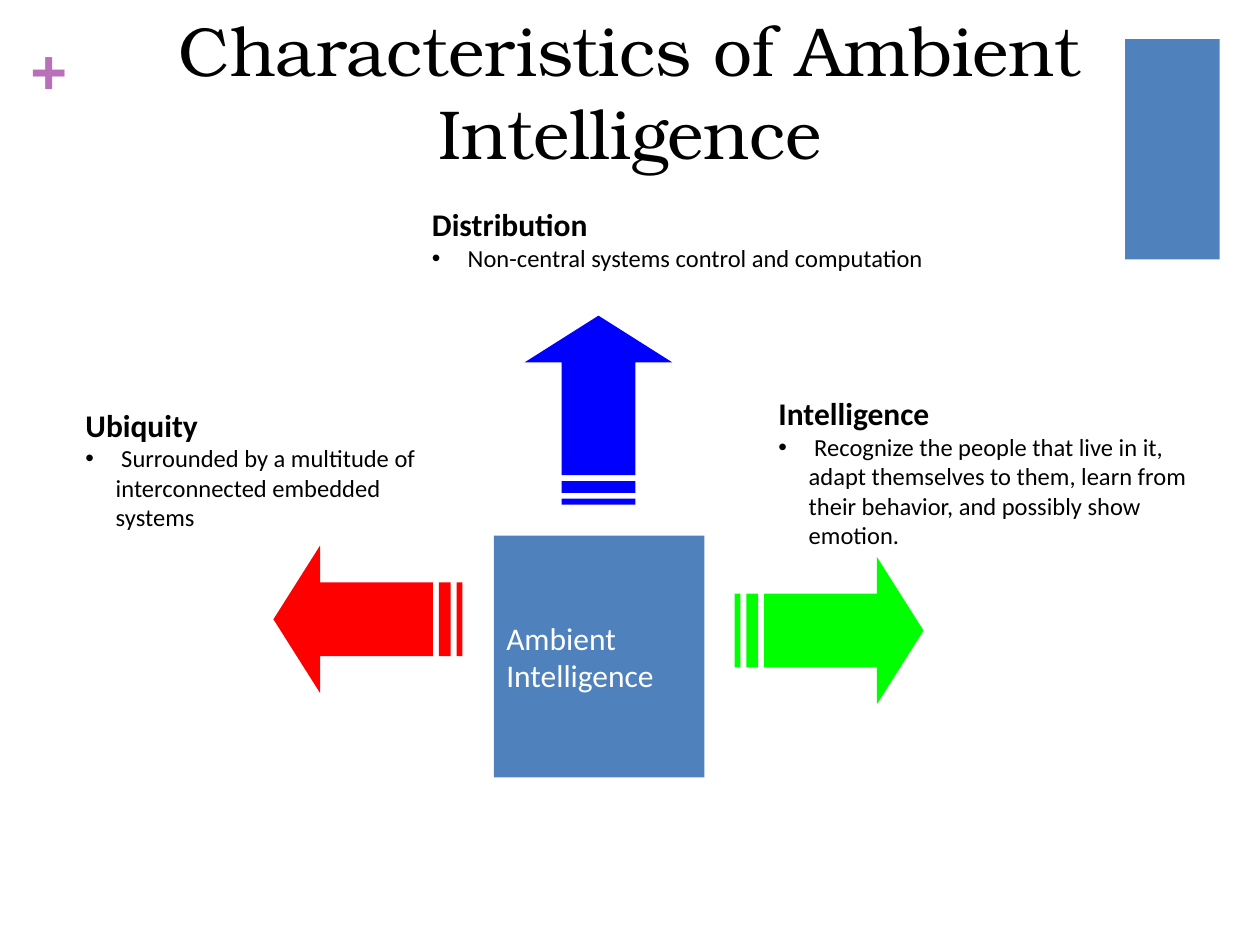
from dataclasses import dataclass

from lxml import etree
from pptx import Presentation
from pptx.dml.color import RGBColor
from pptx.enum.shapes import MSO_SHAPE
from pptx.enum.text import MSO_ANCHOR, MSO_AUTO_SIZE, PP_ALIGN
from pptx.oxml.ns import qn
from pptx.util import Inches, Pt

RECT = MSO_SHAPE.RECTANGLE
MIDDLE = MSO_ANCHOR.MIDDLE
CENTER, LEFT = PP_ALIGN.CENTER, PP_ALIGN.LEFT
NO_FIT = MSO_AUTO_SIZE.NONE

COLORS = {
    "panel": "4F81BD", "plus": "B870B8", "black": "000000", "white": "FFFFFF",
    "green": "00FF00", "red": "FF0000", "blue": "0000FF",
}
ARROW_W, ARROW_H = 1.5, 1.17
HEAD = 0.37  # length of the arrow head
INDENT = 0.24


@dataclass
class Arrow:
    left: float
    top: float
    turn: int
    color: str


@dataclass
class Trait:
    left: float
    top: float
    width: float
    height: float
    head: str
    point: str


ARROWS = [
    Arrow(5.83, 4.42, 0, "green"),
    Arrow(2.17, 4.33, 180, "red"),
    Arrow(4, 2.67, 270, "blue"),
]
TRAITS = [
    Trait(6.08, 3.08, 3.58, 1.35, "Intelligence",
          " Recognize the people that live in it, adapt themselves to them, "
          "learn from their behavior, and possibly show emotion."),
    Trait(0.58, 3.17, 3.08, 1.11, "Ubiquity",
          " Surrounded by a multitude of interconnected embedded systems"),
    Trait(3.33, 1.58, 5, 0.64, "Distribution",
          " Non-central systems control and computation"),
]


def style(para, size: float, font: str, color: str, bold: bool = False) -> None:
    for run in para.runs:
        run.font.size = Pt(size)
        run.font.name = font
        run.font.bold = bold
        run.font.color.rgb = RGBColor.from_string(COLORS[color])


def paint(shape, color: str) -> None:
    shape.shadow.inherit = False
    shape.fill.solid()
    shape.fill.fore_color.rgb = RGBColor.from_string(COLORS[color])
    shape.line.fill.background()


def add_panel(shapes, left: float, top: float, width: float, height: float):
    panel = shapes.add_shape(RECT, Inches(left), Inches(top),
                             Inches(width), Inches(height))
    paint(panel, "panel")
    return panel


def add_arrow(shapes, arrow: Arrow) -> None:
    """Draw a striped arrow that points right, then turn it."""
    def spot(x: float, y: float) -> tuple[int, int]:
        return Inches(arrow.left + x), Inches(arrow.top + y)

    unit = ARROW_W / 32  # stripes and gaps are counted in this unit
    neck = ARROW_W - HEAD
    high, low = ARROW_H / 4, ARROW_H * 3 / 4
    body = [(neck, 0), (neck, high), (5 * unit, high), (5 * unit, low),
            (neck, low), (neck, ARROW_H), (ARROW_W, ARROW_H / 2)]
    bars = [[(a * unit, high), (a * unit, low), (b * unit, low), (b * unit, high)]
            for a, b in ((2, 4), (0, 1))]
    pen = shapes.build_freeform(*spot(*body[0]))
    pen.add_line_segments([spot(*p) for p in body[1:]], close=True)
    for bar in bars:
        pen.move_to(*spot(*bar[0]))
        pen.add_line_segments([spot(*p) for p in bar[1:]], close=True)
    shape = pen.convert_to_shape()
    shape.rotation = arrow.turn
    paint(shape, arrow.color)


def add_bullet(para) -> None:
    props = para._p.get_or_add_pPr()
    props.set("marL", str(Inches(INDENT)))
    props.set("indent", str(-Inches(INDENT)))
    etree.SubElement(props, qn("a:buFont")).set("typeface", "Arial")
    etree.SubElement(props, qn("a:buChar")).set("char", "•")


def add_trait(shapes, trait: Trait) -> None:
    box = shapes.add_textbox(Inches(trait.left), Inches(trait.top),
                             Inches(trait.width), Inches(trait.height))
    frame = box.text_frame
    frame.word_wrap = True
    frame.text = f"{trait.head}\n{trait.point}"
    head, point = frame.paragraphs
    style(head, 18, "Calibri", "black", True)
    style(point, 14, "Calibri", "black")
    add_bullet(point)


def main() -> None:
    deck = Presentation()
    deck.slide_width, deck.slide_height = Inches(10), Inches(7.5)
    slide = deck.slides.add_slide(deck.slide_layouts[5])
    shapes = slide.shapes

    # Title
    title = shapes.title
    title.left, title.top = Inches(0.5), Inches(0.3)
    title.width, title.height = Inches(9), Inches(0.83)
    frame = title.text_frame
    frame.text = "Characteristics of Ambient Intelligence"
    frame.word_wrap = True
    frame.auto_size = NO_FIT
    frame.vertical_anchor = MIDDLE
    frame.paragraphs[0].alignment = CENTER
    style(frame.paragraphs[0], 39.6, "TeX Gyre Bonum", "black")

    # Corner panel and plus sign
    add_panel(shapes, 8.93, 0.31, 0.75, 1.75)
    plus = shapes.add_textbox(Inches(0.24), Inches(0.25),
                              Inches(0.28), Inches(0.61)).text_frame
    plus.margin_left = plus.margin_right = 0
    plus.margin_top = plus.margin_bottom = 0
    plus.text = "+"
    style(plus.paragraphs[0], 36, "Arial", "plus", True)

    # Arrows around the central box
    for arrow in ARROWS:
        add_arrow(shapes, arrow)
    core = add_panel(shapes, 3.92, 4.25, 1.67, 1.92).text_frame
    core.text = "Ambient\nIntelligence"
    core.word_wrap = True
    core.vertical_anchor = MIDDLE
    for para in core.paragraphs:
        para.alignment = LEFT
        style(para, 18, "Calibri", "white")

    # Traits
    for trait in TRAITS:
        add_trait(shapes, trait)

    deck.save("out.pptx")


if __name__ == "__main__":
    main()
